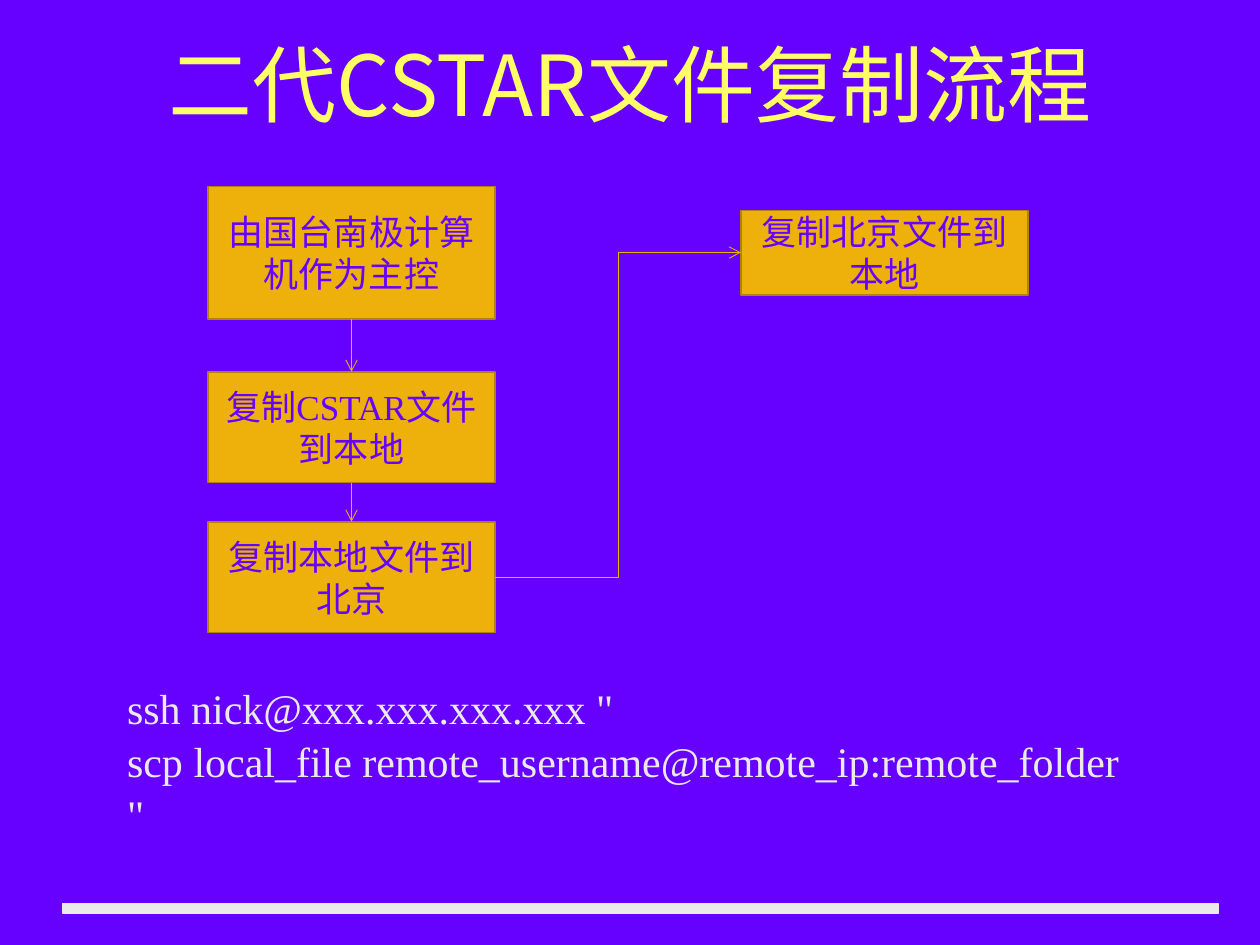
from pptx import Presentation
from pptx.dml.color import RGBColor
from pptx.enum.shapes import MSO_CONNECTOR as CONN, MSO_SHAPE as SHAPE
from pptx.enum.text import MSO_ANCHOR as ANCHOR, PP_ALIGN as ALIGN
from pptx.oxml.ns import qn
from pptx.util import Inches, Pt
from lxml import etree

VIOLET = RGBColor(0x66, 0x00, 0xFF)
YELLOW = RGBColor(0xFF, 0xFF, 0x66)
AMBER = RGBColor(0xEE, 0xB0, 0x0B)
BROWN = RGBColor(0xB0, 0x82, 0x08)
PALE = RGBColor(0xEA, 0xEA, 0xEA)
CJK, SERIF = "Noto Sans CJK SC", "Times New Roman"


def add_run(p, text, size, font, color):
    r = p.add_run()
    r.text = text
    r.font.size = Pt(size)
    r.font.name = font
    r.font.color.rgb = color
    etree.SubElement(r.font._element, qn("a:ea"), typeface=CJK)


def add_block(shape, x, y, w, h, fill, line):
    sp = s.shapes.add_shape(shape, Inches(x), Inches(y), Inches(w), Inches(h))
    sp.shadow.inherit = False
    sp.fill.solid()
    sp.fill.fore_color.rgb = fill
    sp.line.color.rgb = line
    sp.line.width = Pt(1)
    return sp


prs = Presentation()
prs.slide_width, prs.slide_height = Inches(10), Inches(7.5)
s = prs.slides.add_slide(prs.slide_layouts[6])
s.background.fill.solid()
s.background.fill.fore_color.rgb = VIOLET

# Footer bar
add_block(SHAPE.RECTANGLE, 0.5, 7.17, 9.17, 0.08, PALE, PALE)

# Title
tf = s.shapes.add_textbox(Inches(0.5), Inches(0.3), Inches(9), Inches(1.25)).text_frame
tf.word_wrap = True
p = tf.paragraphs[0]
p.alignment = ALIGN.CENTER
p.line_spacing = 0.9
add_run(p, "二代CSTAR文件复制流程", 48, CJK, YELLOW)

# Process steps, in flow order: left, top, height, text
steps = [
    (1.65, 1.48, 1.05, "由国台南极计算机作为主控"),
    (1.65, 2.95, 0.88, "复制CSTAR文件到本地"),
    (1.65, 4.14, 0.88, "复制本地文件到北京"),
    (5.88, 1.67, 0.67, "复制北京文件到本地"),
]
boxes = []
for x, y, h, text in steps:
    sp = add_block(SHAPE.FLOWCHART_PROCESS, x, y, 2.28, h, AMBER, BROWN)
    tf = sp.text_frame
    tf.word_wrap = True
    tf.vertical_anchor = ANCHOR.MIDDLE
    p = tf.paragraphs[0]
    p.alignment = ALIGN.CENTER
    add_run(p, text, 20, SERIF, VIOLET)
    boxes.append(sp)

# Arrows from each step to the next
routes = [(CONN.STRAIGHT, 2, 0), (CONN.STRAIGHT, 2, 0), (CONN.ELBOW, 3, 1)]
for start, end, (kind, out_site, in_site) in zip(boxes, boxes[1:], routes):
    c = s.shapes.add_connector(kind, 0, 0, 0, 0)
    c.begin_connect(start, out_site)
    c.end_connect(end, in_site)
    c.line.color.rgb = AMBER
    c.line.width = Pt(0.5)
    etree.SubElement(c.line._get_or_add_ln(), qn("a:tailEnd"), type="arrow")
    etree.SubElement(c._element.spPr, qn("a:effectLst"))

# Commands
tf = s.shapes.add_textbox(Inches(0.91), Inches(5.35), Inches(8.19), Inches(1.31)).text_frame
tf.word_wrap = True
commands = [
    'ssh nick@xxx.xxx.xxx.xxx "',
    'scp local_file remote_username@remote_ip:remote_folder "',
]
for i, command in enumerate(commands):
    p = tf.add_paragraph() if i else tf.paragraphs[0]
    p.line_spacing = 1.05
    add_run(p, command, 24, SERIF, PALE)

prs.save("out.pptx")
